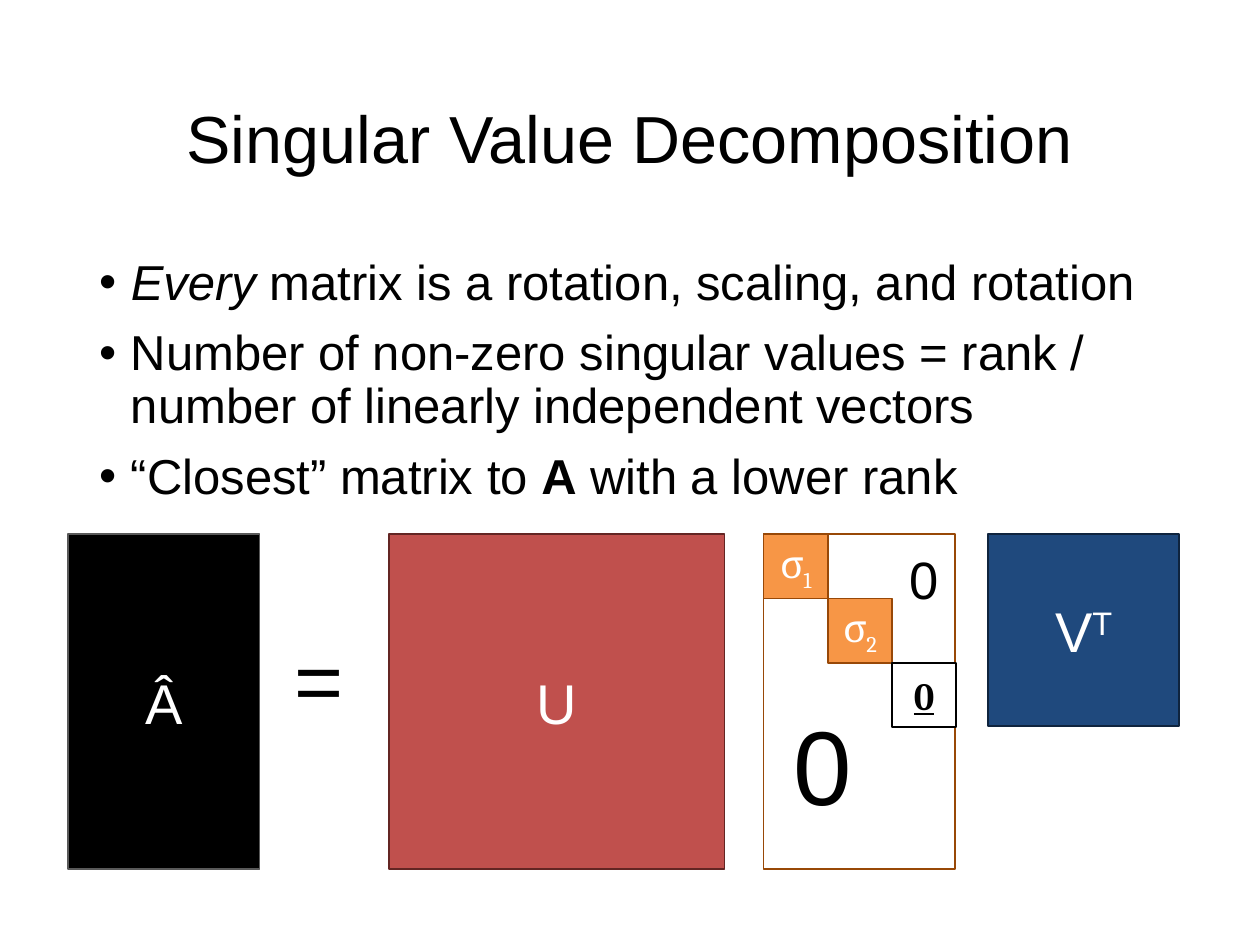
from pptx import Presentation
from pptx import util as u
from pptx.dml.color import RGBColor
from pptx.enum import shapes, text
from pptx.oxml.ns import qn
from lxml import etree

Inches, Pt = u.Inches, u.Pt
TOP, LONG, SHORT, CELL = 4.24, 2.66, 1.52, 0.51


def color(value):
    return RGBColor.from_string(value)


def place(shape, box):
    shape.left, shape.top, shape.width, shape.height = map(Inches, box)


def add_span(para, words, size, font="Arial", fill="000000", **style):
    """Add a run; style may hold bold, italic, underline or baseline."""
    span = para.add_run()
    span.text = words
    span.font.size, span.font.name = Pt(size), font
    span.font.color.rgb = color(fill)
    baseline = style.pop("baseline", None)
    for name, value in style.items():
        setattr(span.font, name, value)
    if baseline:
        span.font._element.set("baseline", str(baseline * 1000))


def add_block(page, box, fill, line):
    """Draw an outlined rectangle and return its centred paragraph."""
    block = page.shapes.add_shape(shapes.MSO_SHAPE.RECTANGLE, *map(Inches, box))
    block.shadow.inherit = False
    if fill:
        block.fill.solid()
        block.fill.fore_color.rgb = color(fill)
    else:
        block.fill.background()
    block.line.color.rgb = color(line)
    block.line.width = Pt(1)
    frame = block.text_frame
    frame.vertical_anchor = text.MSO_ANCHOR.MIDDLE
    frame.margin_left = frame.margin_right = 0
    para = frame.paragraphs[0]
    para.alignment = text.PP_ALIGN.CENTER
    return para


def add_symbol(page, box, words, size, align=text.PP_ALIGN.CENTER):
    frame = page.shapes.add_textbox(*map(Inches, box)).text_frame
    frame.word_wrap = True
    frame.margin_top = Inches(0.1)
    frame.paragraphs[0].alignment = align
    add_span(frame.paragraphs[0], words, size)


def add_title(page, box):
    title = page.shapes.title
    place(title, box)
    title.text_frame.vertical_anchor = text.MSO_ANCHOR.MIDDLE
    para = title.text_frame.paragraphs[0]
    para.alignment = text.PP_ALIGN.CENTER
    para.line_spacing = 0.9
    add_span(para, "Singular Value Decomposition", 38)


def add_bullets(page, box):
    items = [
        [("Every", {"italic": True}),
         (" matrix is a rotation, scaling, and rotation", {})],
        [("Number of non-zero singular values = rank / "
          "number of linearly independent vectors", {})],
        [("“Closest” matrix to ", {}), ("A", {"bold": True}),
         (" with a lower rank", {})],
    ]
    frame = page.shapes.add_textbox(*map(Inches, box)).text_frame
    frame.word_wrap = True
    for index, spans in enumerate(items):
        para = frame.add_paragraph() if index else frame.paragraphs[0]
        para.line_spacing, para.space_before = 0.9, Pt(10)
        props = para._p.get_or_add_pPr()
        props.set("marL", str(Inches(0.25)))
        props.set("indent", str(-Inches(0.25)))
        etree.SubElement(props, qn("a:buFont")).set("typeface", "Arial")
        etree.SubElement(props, qn("a:buChar")).set("char", "•")
        for words, style in spans:
            add_span(para, words, 28, **style)


def add_matrix(page, box, name, fill, line, power=""):
    para = add_block(page, box, fill, line)
    add_span(para, name, 32, fill="FFFFFF")
    if power:
        add_span(para, power, 32, fill="FFFFFF", baseline=30)


def add_singular_values(page, box):
    left, top = box[:2]
    add_block(page, box, None, "984807")
    # Diagonal: two kept values, then the dropped one
    for step in range(3):
        cell = (left + step * CELL, top + step * CELL, CELL, CELL)
        if step < 2:
            para = add_block(page, cell, "F79646", "984807")
            add_span(para, "σ", 22, "Cambria", "FFFFFF")
            add_span(para, str(step + 1), 22, "Cambria", "FFFFFF", baseline=-25)
        else:
            para = add_block(page, cell, "FFFFFF", "000000")
            add_span(para, "0", 22, "Cambria", bold=True, underline=True)
    # Zeros off the diagonal
    add_symbol(page, (left + 0.14, top + 1.22, 0.7, 0.89), "0", 60,
               text.PP_ALIGN.LEFT)
    add_symbol(page, (left + 2 * CELL, top, CELL, 0.49), "0", 30)


def main():
    deck = Presentation()
    deck.slide_width, deck.slide_height = Inches(10), Inches(7.5)
    page = deck.slides.add_slide(deck.slide_layouts[5])
    add_title(page, (0.69, 0.4, 8.62, 1.45))
    add_bullets(page, (0.69, 2, 8.62, 4.76))
    # Equation: approximation = U, singular values, V transposed
    add_matrix(page, (0.54, TOP, SHORT, LONG), "Â", "000000", "595959")
    add_symbol(page, (2.11, 4.88, 0.84, 1), "=", 48)
    add_matrix(page, (3.09, TOP, LONG, LONG), "U", "C0504D", "632523")
    add_singular_values(page, (6.06, TOP, SHORT, LONG))
    add_matrix(page, (7.84, TOP, SHORT, SHORT), "V", "1F497D", "0F243E", "T")
    deck.save("out.pptx")


if __name__ == "__main__":
    main()
